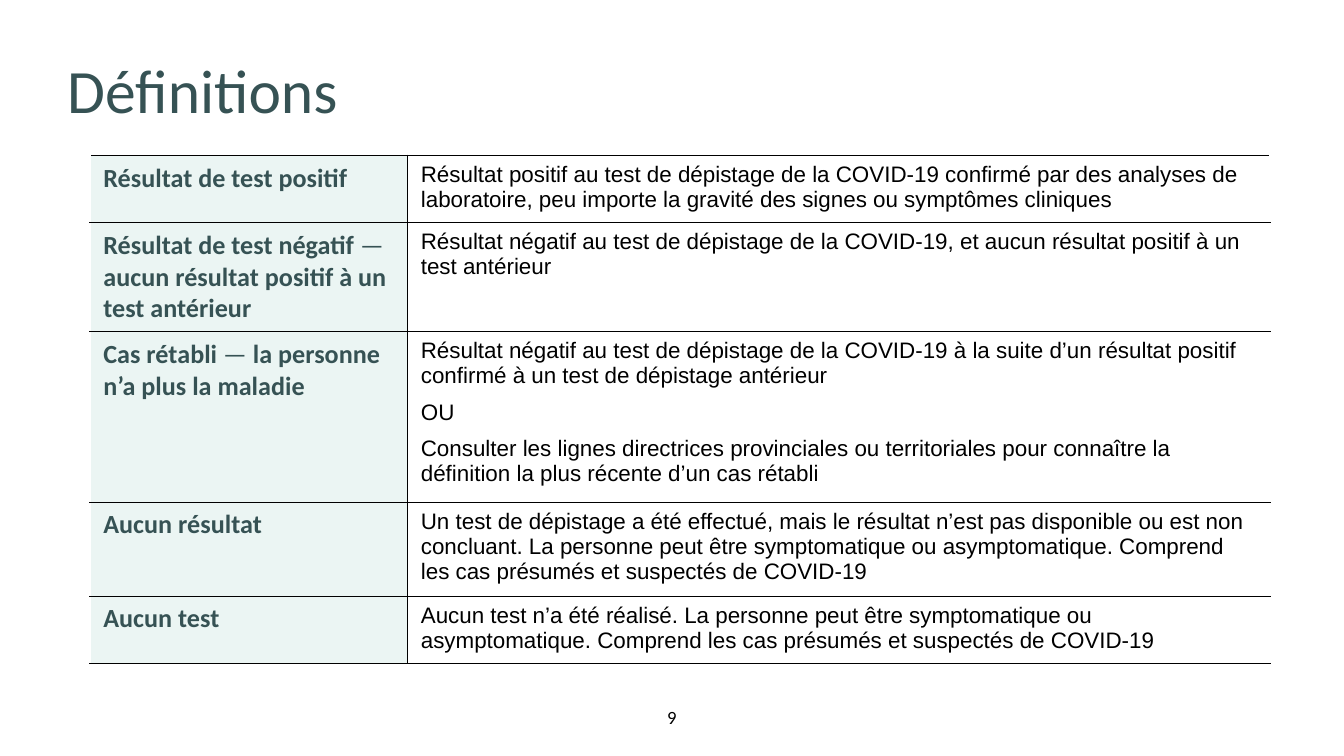
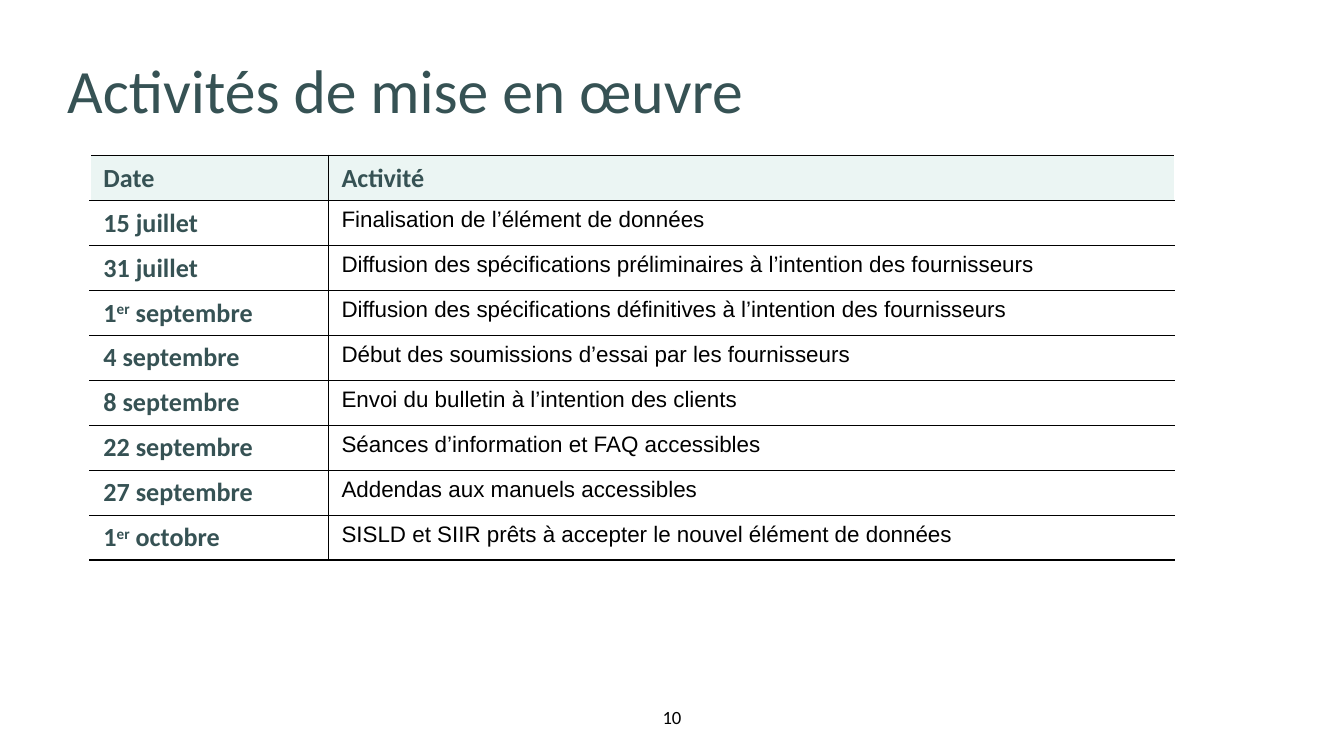
from lxml.etree import SubElement
from pptx import Presentation
from pptx.dml.color import RGBColor
from pptx.enum.text import MSO_ANCHOR, MSO_AUTO_SIZE, PP_ALIGN
from pptx.oxml.ns import qn
from pptx.util import Cm, Pt

TEAL = "365254"
MINT = "EBF5F3"
BLACK = "000000"
WHITE = "FFFFFF"
HEADING_FONT = "Calibri"
BODY_FONT = "Arial"
TITLE_ONLY_LAYOUT = 5

# A "|" separates the runs of a label; see write_label.
DEFINITIONS = [
    ("Résultat de test positif",
     ["Résultat positif au test de dépistage de la COVID-19 confirmé par des analyses de "
      "laboratoire, peu importe la gravité des signes ou symptômes cliniques"]),
    ("Résultat de test négatif |— |aucun résultat positif à un test antérieur",
     ["Résultat négatif au test de dépistage de la COVID-19, et aucun résultat positif à un "
      "test antérieur"]),
    ("Cas rétabli |— |la personne n’a plus la maladie",
     ["Résultat négatif au test de dépistage de la COVID-19 à la suite d’un résultat positif "
      "confirmé à un test de dépistage antérieur",
      "OU",
      "Consulter les lignes directrices provinciales ou territoriales pour connaître la "
      "définition la plus récente d’un cas rétabli"]),
    ("Aucun résultat",
     ["Un test de dépistage a été effectué, mais le résultat n’est pas disponible ou est non "
      "concluant. La personne peut être symptomatique ou asymptomatique. Comprend les cas "
      "présumés et suspectés de COVID-19"]),
    ("Aucun test",
     ["Aucun test n’a été réalisé. La personne peut être symptomatique ou asymptomatique. "
      "Comprend les cas présumés et suspectés de COVID-19"]),
]
DEFINITION_HEIGHTS = [1.22, 2.06, 3.04, 1.68, 1.21]

ACTIVITY_HEADER = ("Date", "Activité")
ACTIVITIES = [
    ("15 juillet", "Finalisation de l’élément de données"),
    ("31 juillet", "Diffusion des spécifications préliminaires à l’intention des fournisseurs"),
    ("1|er| septembre", "Diffusion des spécifications définitives à l’intention des fournisseurs"),
    ("4 septembre", "Début des soumissions d’essai par les fournisseurs"),
    ("8 septembre", "Envoi du bulletin à l’intention des clients"),
    ("22 septembre", "Séances d’information et FAQ accessibles"),
    ("27 septembre", "Addendas aux manuels accessibles"),
    ("1|er| octobre", "SISLD et SIIR prêts à accepter le nouvel élément de données"),
]
ACTIVITY_HEIGHT = 0.85


def color(hex_string):
    return RGBColor.from_string(hex_string)


def set_font(font, name, size, hex_string, bold=False):
    font.name = name
    font.size = Pt(size)
    font.bold = bold
    font.color.rgb = color(hex_string)


def clear_insets(text_frame):
    text_frame.margin_left = text_frame.margin_right = 0
    text_frame.margin_top = text_frame.margin_bottom = 0
    text_frame.word_wrap = True
    text_frame.auto_size = MSO_AUTO_SIZE.SHAPE_TO_FIT_TEXT


def add_page_number(slide, number):
    box = slide.shapes.add_textbox(Cm(11.9), Cm(13.34), Cm(1.6), Cm(0.43))
    clear_insets(box.text_frame)
    box.text_frame.vertical_anchor = MSO_ANCHOR.MIDDLE
    paragraph = box.text_frame.paragraphs[0]
    paragraph.text = str(number)
    paragraph.alignment = PP_ALIGN.CENTER
    run = paragraph.runs[0]
    set_font(run.font, HEADING_FONT, 10, BLACK)
    # The formatted run becomes an automatic slide number field.
    field = SubElement(paragraph._p, qn("a:fld"), type="slidenum",
                       id="{B6F15528-21DE-4FAA-801E-634DDDAF4B2B}")
    field.extend(list(run._r))
    paragraph._p.remove(run._r)


def add_titled_slide(presentation, title, number):
    slide = presentation.slides.add_slide(presentation.slide_layouts[TITLE_ONLY_LAYOUT])
    shape = slide.shapes.title
    shape.left, shape.top, shape.width, shape.height = Cm(1.27), Cm(1.22), Cm(22.86), Cm(1.19)
    shape.text_frame.text = title
    clear_insets(shape.text_frame)
    shape.text_frame.vertical_anchor = MSO_ANCHOR.TOP
    paragraph = shape.text_frame.paragraphs[0]
    paragraph.alignment = PP_ALIGN.LEFT
    paragraph.line_spacing = Pt(33)
    set_font(paragraph.runs[0].font, HEADING_FONT, 33, TEAL)
    add_page_number(slide, number)
    return slide


def set_borders(cell, **borders):
    """Draw the sides L, R, T and B, each given as (colour, points)."""
    properties = cell._tc.get_or_add_tcPr()
    for side in "LRTB":
        hex_string, points = borders[side]
        line = SubElement(properties, qn(f"a:ln{side}"), w=str(Pt(points)))
        fill = SubElement(line, qn("a:solidFill"))
        SubElement(fill, qn("a:srgbClr"), val=hex_string)


def add_ruled_table(slide, column_widths, row_heights):
    """Add a two-column table with black rules and open left and right edges."""
    frame = slide.shapes.add_table(len(row_heights), len(column_widths), Cm(1.7), Cm(2.94),
                                   Cm(sum(column_widths)), Cm(sum(row_heights)))
    table = frame.table
    table.first_row = table.horz_banding = False
    for column, width in zip(table.columns, column_widths):
        column.width = Cm(width)
    thin, thick, edge = (BLACK, 0.5), (BLACK, 1), (WHITE, 1)
    last_row, last_column = len(row_heights) - 1, len(column_widths) - 1
    for row_index, (row, height) in enumerate(zip(table.rows, row_heights)):
        row.height = Cm(height)
        for column_index, cell in enumerate(row.cells):
            set_borders(cell,
                        L=edge if column_index == 0 else thin,
                        R=edge if column_index == last_column else thin,
                        T=thick if row_index == 0 else thin,
                        B=thick if row_index == last_row else thin)
            cell.fill.background()
    return table


def shade(cell):
    cell.fill.solid()
    cell.fill.fore_color.rgb = color(MINT)


def write_label(cell, label):
    """Write a bold label; dashes are not bold and "er" is superscript."""
    paragraph = cell.text_frame.paragraphs[0]
    for piece in label.split("|"):
        run = paragraph.add_run()
        run.text = piece
        set_font(run.font, HEADING_FONT, 14, TEAL, bold=piece != "— ")
        if piece == "er":
            run.font._element.set("baseline", "30000")


def write_body(cell, texts):
    cell.text_frame.text = "\n".join(texts)
    paragraphs = cell.text_frame.paragraphs
    for paragraph in paragraphs:
        set_font(paragraph.runs[0].font, BODY_FONT, 12, BLACK)
    for paragraph in paragraphs[:-1]:
        paragraph.space_after = Pt(6)


def add_definitions(presentation):
    slide = add_titled_slide(presentation, "Définitions", 9)
    table = add_ruled_table(slide, [6, 16.3], DEFINITION_HEIGHTS)
    for row, (term, texts) in zip(table.rows, DEFINITIONS):
        term_cell, text_cell = row.cells
        shade(term_cell)
        write_label(term_cell, term)
        write_body(text_cell, texts)


def add_activities(presentation):
    slide = add_titled_slide(presentation, "Activités de mise en œuvre", 10)
    table = add_ruled_table(slide, [4.5, 16], [ACTIVITY_HEIGHT] * (len(ACTIVITIES) + 1))
    header, *rows = table.rows
    for cell, heading in zip(header.cells, ACTIVITY_HEADER):
        shade(cell)
        write_label(cell, heading)
    for row, (date, activity) in zip(rows, ACTIVITIES):
        date_cell, activity_cell = row.cells
        write_label(date_cell, date)
        write_body(activity_cell, [activity])


def main():
    presentation = Presentation()
    presentation.slide_width, presentation.slide_height = Cm(25.4), Cm(14.29)
    # Page numbers follow on from the preceding slides.
    presentation.element.set("firstSlideNum", "9")
    add_definitions(presentation)
    add_activities(presentation)
    presentation.save("out.pptx")


if __name__ == "__main__":
    main()
